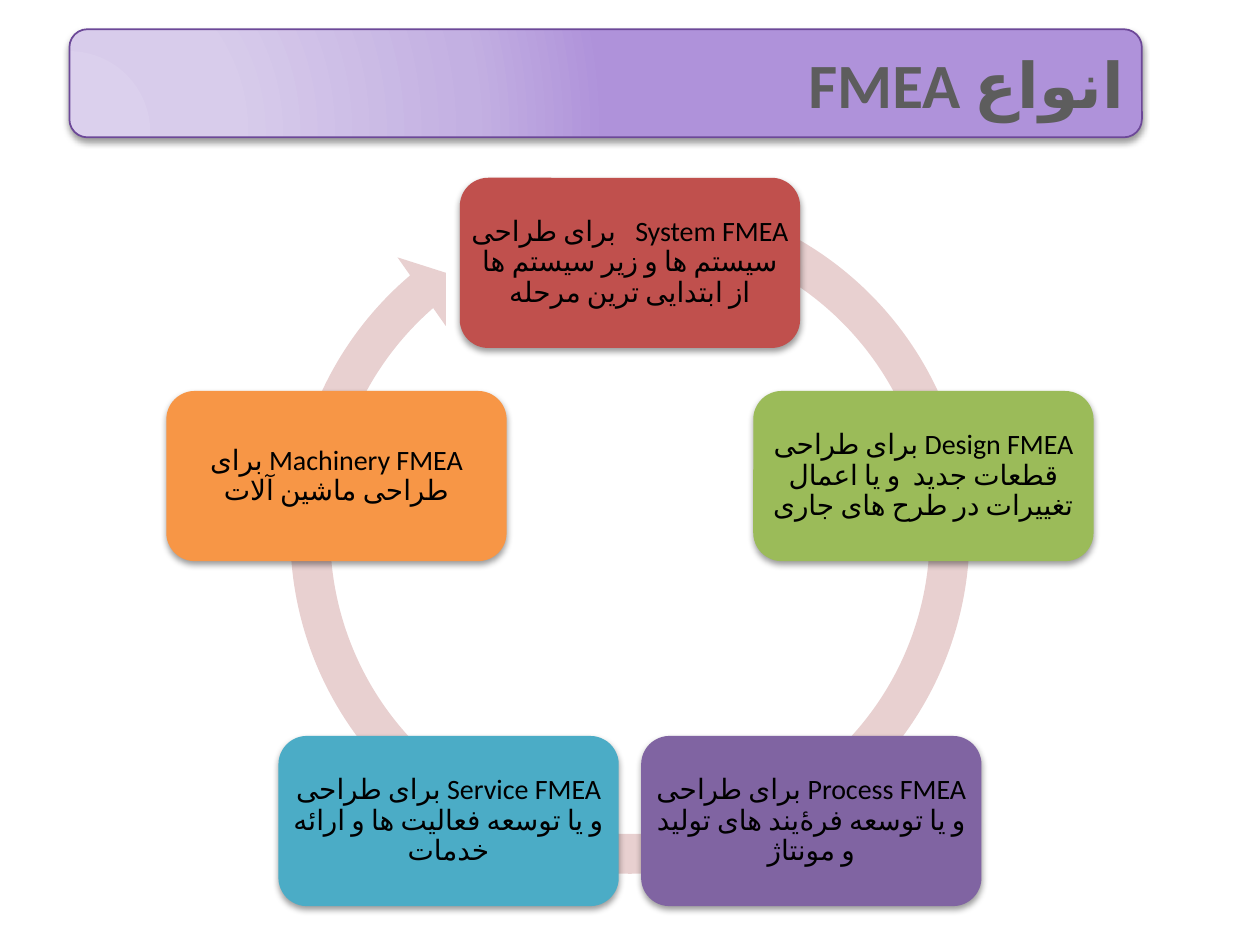
from math import cos, pi, sin

from lxml.etree import SubElement
from pptx import Presentation
from pptx.dml.color import RGBColor
from pptx.enum.lang import MSO_LANGUAGE_ID
from pptx.enum.shapes import MSO_SHAPE
from pptx.enum.text import MSO_ANCHOR, PP_ALIGN
from pptx.oxml import parse_xml
from pptx.oxml.ns import nsdecls, qn
from pptx.util import Cm, Pt

TITLE = "انواع FMEA"
FONT = "Calibri"
TYPES = [  # clockwise from the top
    ("System FMEA   برای طراحی سیستم ها و زیر سیستم ها از ابتدایی ترین مرحله", "C0504D"),
    ("Design FMEA برای طراحی قطعات جدید  و یا اعمال تغییرات در طرح های جاری", "9BBB59"),
    ("Process FMEA برای طراحی و یا توسعه فرۀیند های تولید و مونتاژ", "8064A2"),
    ("Service FMEA برای طراحی و یا توسعه فعالیت ها و ارائه خدمات", "4BACC6"),
    ("Machinery FMEA برای طراحی ماشین آلات", "F79646"),
]
BANNER_STOPS = [(0, "DBD0ED"), (30, "D8CCEB"), (75, "C3B0E2"), (100, "AF92DA")]
BANNER_PATH = ('<a:path path="circle"><a:fillToRect l="5000" t="100000" '
               'r="120000" b="10000"/></a:path>')
TITLE_STOPS = [(0, "555555"), (49, "5D5D5D"), (50, "000000"), (95, "000000"), (100, "000000")]
TITLE_DIRECTION = '<a:lin ang="5400000" scaled="0"/>'

# Centimetres
CENTRE_X, CENTRE_Y, RADIUS = 12.7, 11.52, 6.22
BOX_W, BOX_H = 6.86, 3.43
ARROW_SIZE, ARROW_TOP = 14.58, 3.48
ARROW_ADJUSTMENTS = (0.055, 3.307, 137.604, 173.954, 0.058)


def color(value):
    return RGBColor.from_string(value)


def gradient(stops, direction):
    gs = "".join(f'<a:gs pos="{pos * 1000}"><a:srgbClr val="{c}"/></a:gs>' for pos, c in stops)
    return parse_xml(f'<a:gradFill {nsdecls("a")} rotWithShape="1">'
                     f'<a:gsLst>{gs}</a:gsLst>{direction}</a:gradFill>')


def add_shape(s, kind, x, y, w, h, fill):
    sp = s.shapes.add_shape(kind, Cm(x), Cm(y), Cm(w), Cm(h))
    sp.shadow.inherit = False
    sp.fill.solid()
    sp.fill.fore_color.rgb = color(fill)
    sp.line.fill.background()
    return sp


def drop_shadow(sp):
    effects = sp._element.spPr.find(qn("a:effectLst"))
    shadow = SubElement(effects, qn("a:outerShdw"), blurRad=str(Pt(4)), dist=str(Pt(2)),
                        dir="5400000", rotWithShape="0")
    black = SubElement(shadow, qn("a:srgbClr"), val="000000")
    SubElement(black, qn("a:alpha"), val="40000")


def write_rtl(sp, text, size, align):
    tf = sp.text_frame
    tf.text = text
    tf.word_wrap = True
    tf.vertical_anchor = MSO_ANCHOR.MIDDLE
    p = tf.paragraphs[0]
    p.alignment = align
    p._p.get_or_add_pPr().set("rtl", "1")
    r = p.runs[0]
    r.font.size = Pt(size)
    r.font.name = FONT
    r.font.language_id = MSO_LANGUAGE_ID.FARSI
    r.font.color.rgb = color("000000")
    SubElement(r.font._element, qn("a:cs"), typeface=FONT)
    return p, r


def add_banner(s):
    sp = add_shape(s, MSO_SHAPE.ROUNDED_RECTANGLE, 1.4, 0.59, 21.62, 2.18, "AF92DA")
    spPr = sp._element.spPr
    spPr.replace(spPr.find(qn("a:solidFill")), gradient(BANNER_STOPS, BANNER_PATH))
    sp.line.color.rgb = color("6C4898")
    sp.line.width = Pt(1)
    drop_shadow(sp)
    p, r = write_rtl(sp, TITLE, 36, PP_ALIGN.RIGHT)
    r.font.bold = True
    rPr = r.font._element
    rPr.replace(rPr.find(qn("a:solidFill")), gradient(TITLE_STOPS, TITLE_DIRECTION))
    rPr.insert(0, parse_xml(f'<a:ln {nsdecls("a")} w="{Pt(1.4)}"><a:solidFill>'
                            '<a:srgbClr val="FFFFFF"/></a:solidFill></a:ln>'))


def add_cycle(s):
    arrow = add_shape(s, MSO_SHAPE.CIRCULAR_ARROW, CENTRE_X - ARROW_SIZE / 2, ARROW_TOP,
                      ARROW_SIZE, ARROW_SIZE, "E8D0D0")
    for i, value in enumerate(ARROW_ADJUSTMENTS):
        arrow.adjustments[i] = value
    for i, (text, fill) in enumerate(TYPES):
        angle = 2 * pi * i / len(TYPES)
        x = CENTRE_X + RADIUS * sin(angle) - BOX_W / 2
        y = CENTRE_Y - RADIUS * cos(angle) - BOX_H / 2
        box = add_shape(s, MSO_SHAPE.ROUNDED_RECTANGLE, x, y, BOX_W, BOX_H, fill)
        drop_shadow(box)
        p, r = write_rtl(box, text, 16, PP_ALIGN.CENTER)
        p.line_spacing = 0.9
        tf = box.text_frame
        tf.margin_left = tf.margin_right = tf.margin_top = tf.margin_bottom = Cm(0.02)


def main():
    prs = Presentation()
    prs.slide_width, prs.slide_height = Cm(25.4), Cm(19.05)
    s = prs.slides.add_slide(prs.slide_layouts[6])
    add_banner(s)
    add_cycle(s)
    prs.save("out.pptx")


if __name__ == "__main__":
    main()
